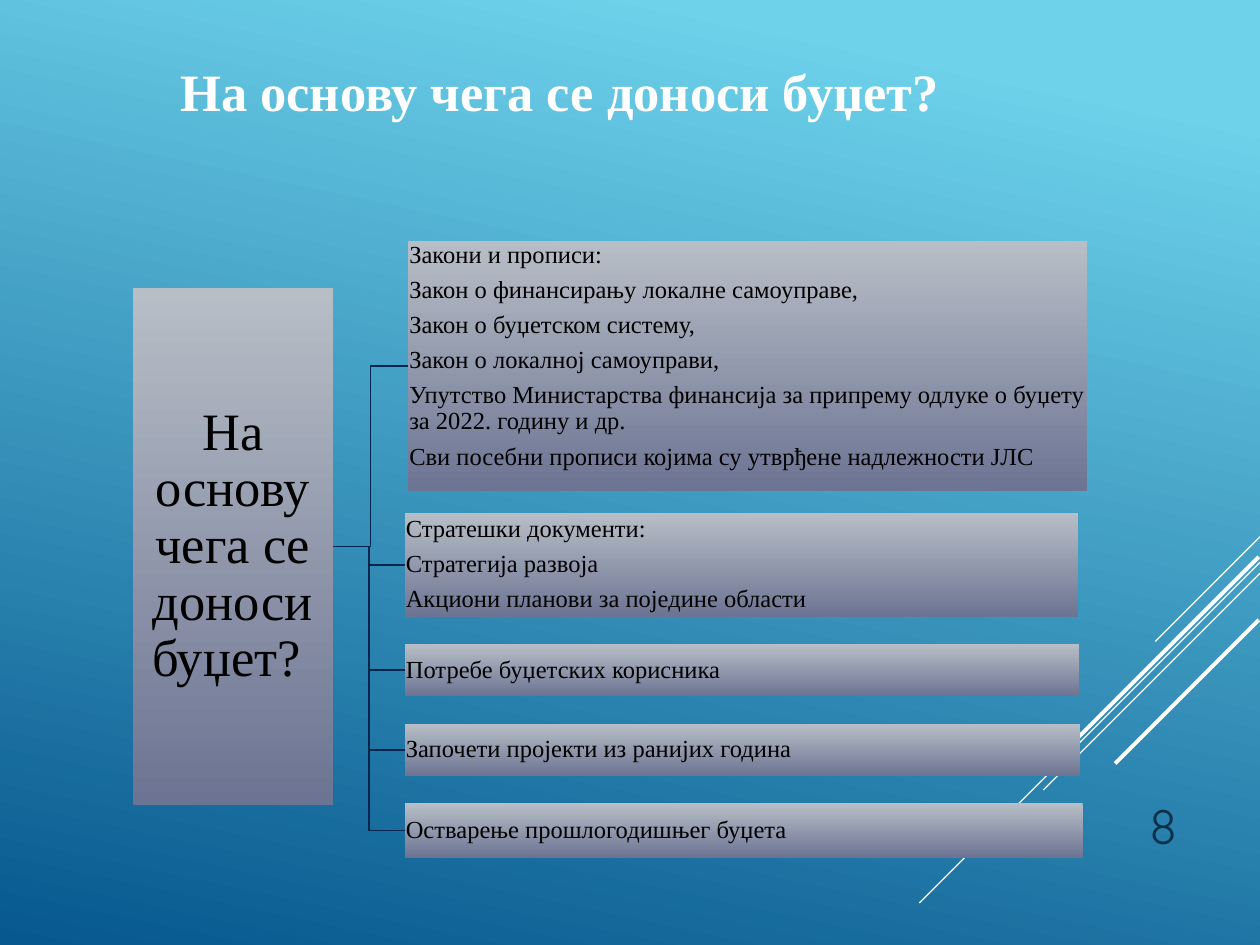
from dataclasses import dataclass

import pptx
import pptx.dml.color
import pptx.enum.dml
import pptx.enum.shapes
import pptx.enum.text
import pptx.oxml.ns
import pptx.oxml.xmlchemy
import pptx.util
from lxml import etree
from pptx.util import Pt

ANCHOR = pptx.enum.text.MSO_ANCHOR
ALIGN = pptx.enum.text.PP_ALIGN
CONNECTOR = pptx.enum.shapes.MSO_CONNECTOR


@dataclass(frozen=True)
class Theme:
    sky: str = "6ED2EB"
    sea: str = "06588E"
    box_top: str = "B8BEC6"
    box_bottom: str = "6C7493"
    branch_line: str = "04264E"
    number: str = "0A304A"
    white: str = "FFFFFF"
    black: str = "000000"
    font: str = "Times New Roman"
    number_font: str = "Quicksand"
    title_size: float = 30
    root_size: float = 30
    branch_size: float = 14
    number_size: float = 28


@dataclass(frozen=True)
class Box:
    left: float
    top: float
    width: float
    height: float
    lines: tuple[str, ...]
    size: float
    inset: float = 0.7
    align: ALIGN = ALIGN.LEFT
    anchor: ANCHOR = ANCHOR.MIDDLE


@dataclass(frozen=True)
class Stripe:
    """A 45-degree line running down and left from its upper right end."""
    right: float
    top: float
    run: float
    weight: float


THEME = Theme()
QUESTION = "На основу чега се доноси буџет?"

STRIPES = (
    Stripe(720, 306.7, 59.8, 0.75),
    Stripe(720, 321.3, 194.7, 0.75),
    Stripe(720, 327.6, 123.8, 0.75),
    Stripe(719.3, 318.2, 113.1, 2.25),
    Stripe(719.3, 354.2, 82.1, 2.25),
)

ROOT = Box(76, 164.5, 114.3, 295.7, (QUESTION + " ",), THEME.root_size,
           inset=1.4, align=ALIGN.CENTER)

BRANCHES = (
    Box(233.2, 137.6, 388, 143.2, (
        "Закони и прописи:",
        "Закон о финансирању локалне самоуправе,",
        "Закон о буџетском систему,",
        "Закон о локалној самоуправи,",
        "Упутство Министарства финансија за припрему одлуке о буџету за 2022. годину и др.",
        "Сви посебни прописи којима су утврђене надлежности ЈЛС",
    ), THEME.branch_size, anchor=ANCHOR.TOP),
    Box(231.2, 293, 385, 59.6, (
        "Стратешки документи:",
        "Стратегија развоја",
        "Акциони планови за поједине области",
    ), THEME.branch_size),
    Box(231.2, 368, 385.3, 30, ("Потребе буџетских корисника",), THEME.branch_size),
    Box(231.2, 413.6, 386, 30, ("Започети пројекти из ранијих година",), THEME.branch_size),
    Box(231.2, 459, 387.5, 31.2, ("Остварење прошлогодишњег буџета",), THEME.branch_size),
)


def rgb(value: str) -> pptx.dml.color.RGBColor:
    return pptx.dml.color.RGBColor.from_string(value)


def fill_gradient(fill, first: str, last: str, angle: float, start: float = 0) -> None:
    """Apply a two-colour gradient; the angle runs counter-clockwise."""
    fill.gradient()
    fill.gradient_angle = angle
    for stop, colour, position in zip(fill.gradient_stops, (first, last), (start, 1)):
        stop.color.rgb = rgb(colour)
        stop.position = position


def add_run(paragraph, text: str, size: float, colour: str,
            font: str = THEME.font, bold: bool = False) -> None:
    run = paragraph.add_run()
    run.text = text
    run.font.name = font
    run.font.size = Pt(size)
    run.font.bold = bold
    run.font.color.rgb = rgb(colour)


def style_line(connector, colour: str, weight: float) -> None:
    connector.line.color.rgb = rgb(colour)
    connector.line.width = Pt(weight)
    etree.SubElement(connector._element.spPr, pptx.oxml.ns.qn("a:effectLst"))


def add_stripe(slide, stripe: Stripe) -> None:
    line = slide.shapes.add_connector(
        CONNECTOR.STRAIGHT, Pt(stripe.right), Pt(stripe.top),
        Pt(stripe.right - stripe.run), Pt(stripe.top + stripe.run))
    style_line(line, THEME.white, stripe.weight)


def add_box(slide, box: Box):
    shape = slide.shapes.add_shape(
        pptx.enum.shapes.MSO_SHAPE.RECTANGLE,
        Pt(box.left), Pt(box.top), Pt(box.width), Pt(box.height))
    shape.shadow.inherit = False
    shape.line.fill.background()
    fill_gradient(shape.fill, THEME.box_top, THEME.box_bottom, 270)
    frame = shape.text_frame
    frame.word_wrap = True
    frame.vertical_anchor = box.anchor
    frame.margin_left = frame.margin_right = Pt(box.inset)
    frame.margin_top = frame.margin_bottom = Pt(box.inset)
    for index, text in enumerate(box.lines):
        paragraph = frame.add_paragraph() if index else frame.paragraphs[0]
        paragraph.alignment = box.align
        paragraph.line_spacing = 0.9
        paragraph.space_after = Pt(0.35 * box.size)
        add_run(paragraph, text, box.size, THEME.black)
    return shape


def add_branch_line(slide, root, branch) -> None:
    elbow = slide.shapes.add_connector(CONNECTOR.ELBOW, 0, 0, 0, 0)
    elbow.begin_connect(root, 3)
    elbow.end_connect(branch, 1)
    style_line(elbow, THEME.branch_line, 1)


def set_title(slide) -> None:
    title = slide.shapes.title
    title.left, title.top, title.width, title.height = Pt(95.8), Pt(30.2), Pt(486), Pt(44)
    frame = title.text_frame
    frame.word_wrap = True
    frame.auto_size = pptx.enum.text.MSO_AUTO_SIZE.SHAPE_TO_FIT_TEXT
    frame.vertical_anchor = ANCHOR.TOP
    paragraph = frame.paragraphs[0]
    paragraph.alignment = ALIGN.LEFT
    add_run(paragraph, QUESTION, THEME.title_size, THEME.white, bold=True)


def add_slide_number(slide, number: str) -> None:
    frame = slide.shapes.add_textbox(Pt(612), Pt(439.2), Pt(67.7), Pt(52.6)).text_frame
    frame.word_wrap = True
    frame.vertical_anchor = ANCHOR.BOTTOM
    paragraph = frame.paragraphs[0]
    paragraph.alignment = ALIGN.RIGHT
    add_run(paragraph, number, THEME.number_size, THEME.number, THEME.number_font)


def main() -> None:
    presentation = pptx.Presentation()
    presentation.slide_width, presentation.slide_height = Pt(720), Pt(540)
    slide = presentation.slides.add_slide(presentation.slide_layouts.get_by_name("Title Only"))
    fill_gradient(slide.background.fill, THEME.sky, THEME.sea, 258, start=0.1)
    for stripe in STRIPES:
        add_stripe(slide, stripe)
    add_slide_number(slide, "8")
    root = add_box(slide, ROOT)
    for branch in BRANCHES:
        add_branch_line(slide, root, add_box(slide, branch))
    set_title(slide)
    presentation.save("out.pptx")


if __name__ == "__main__":
    main()
